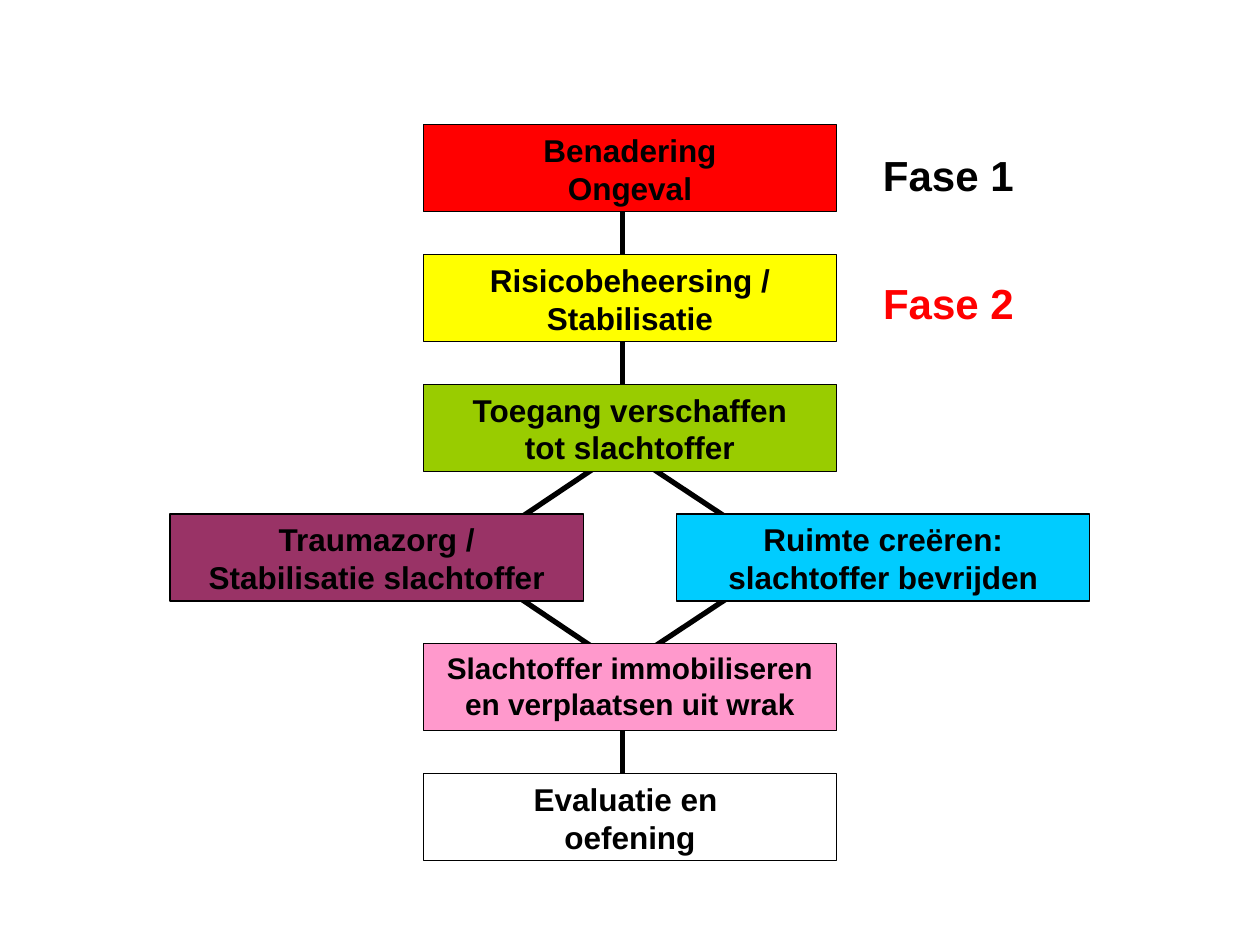
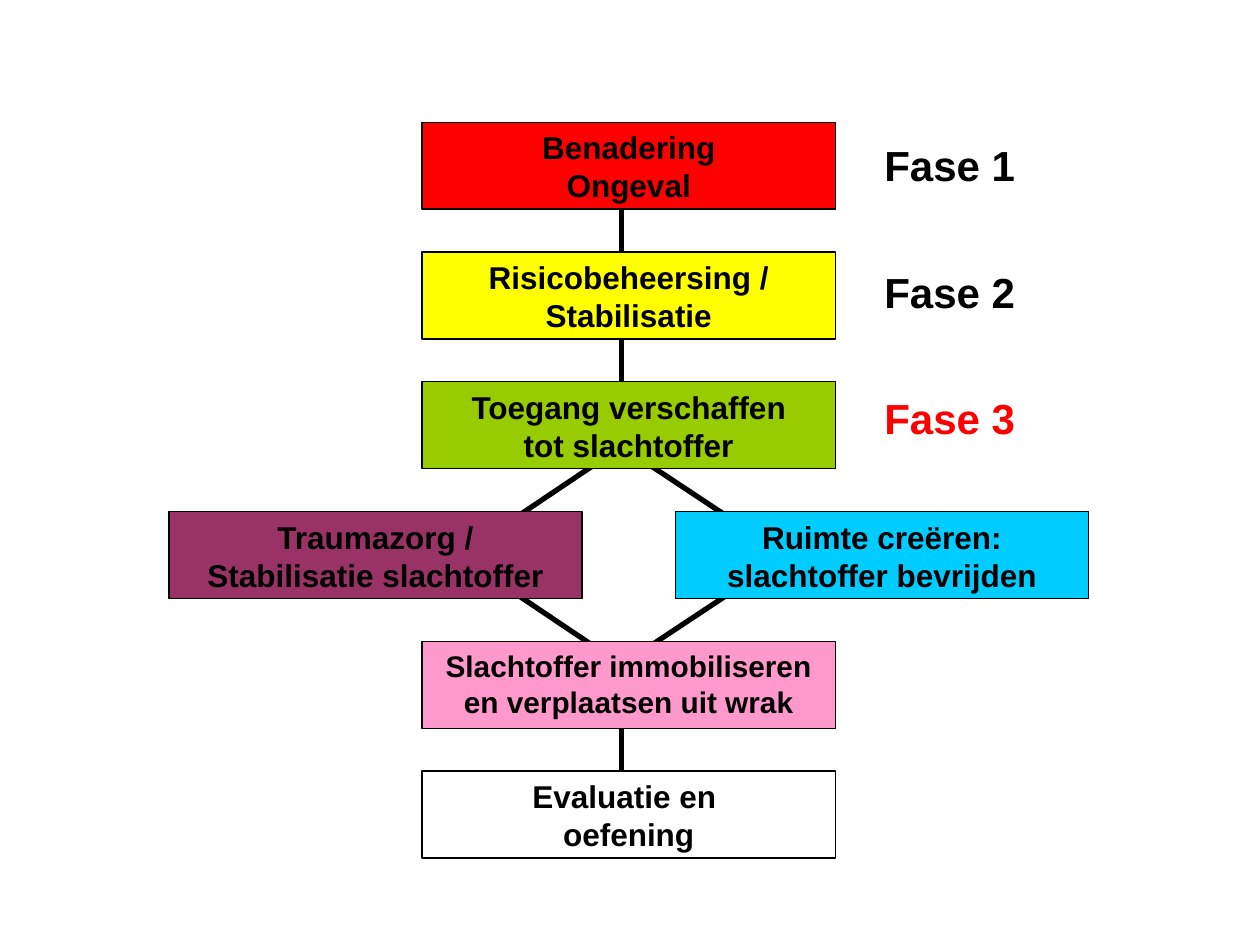
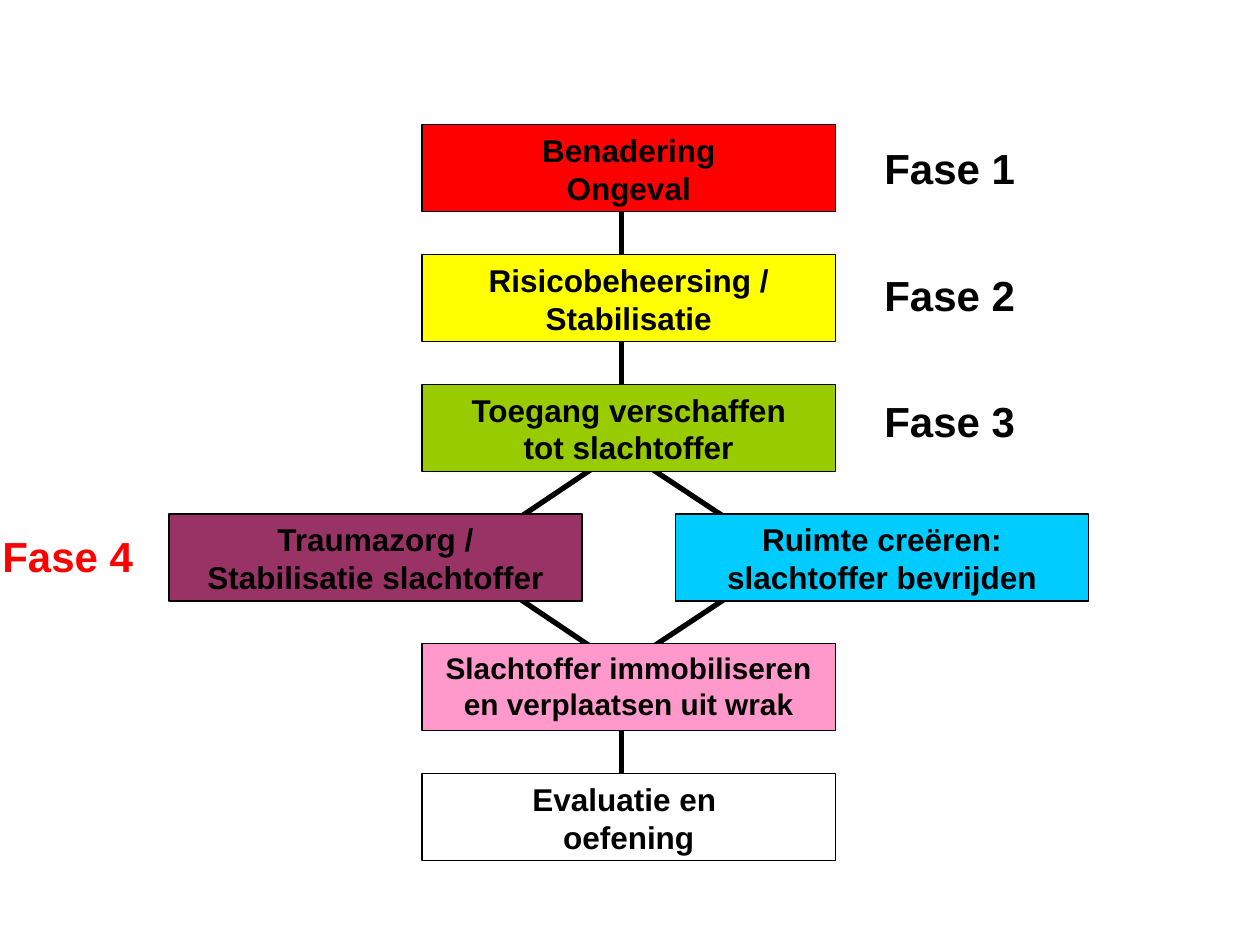
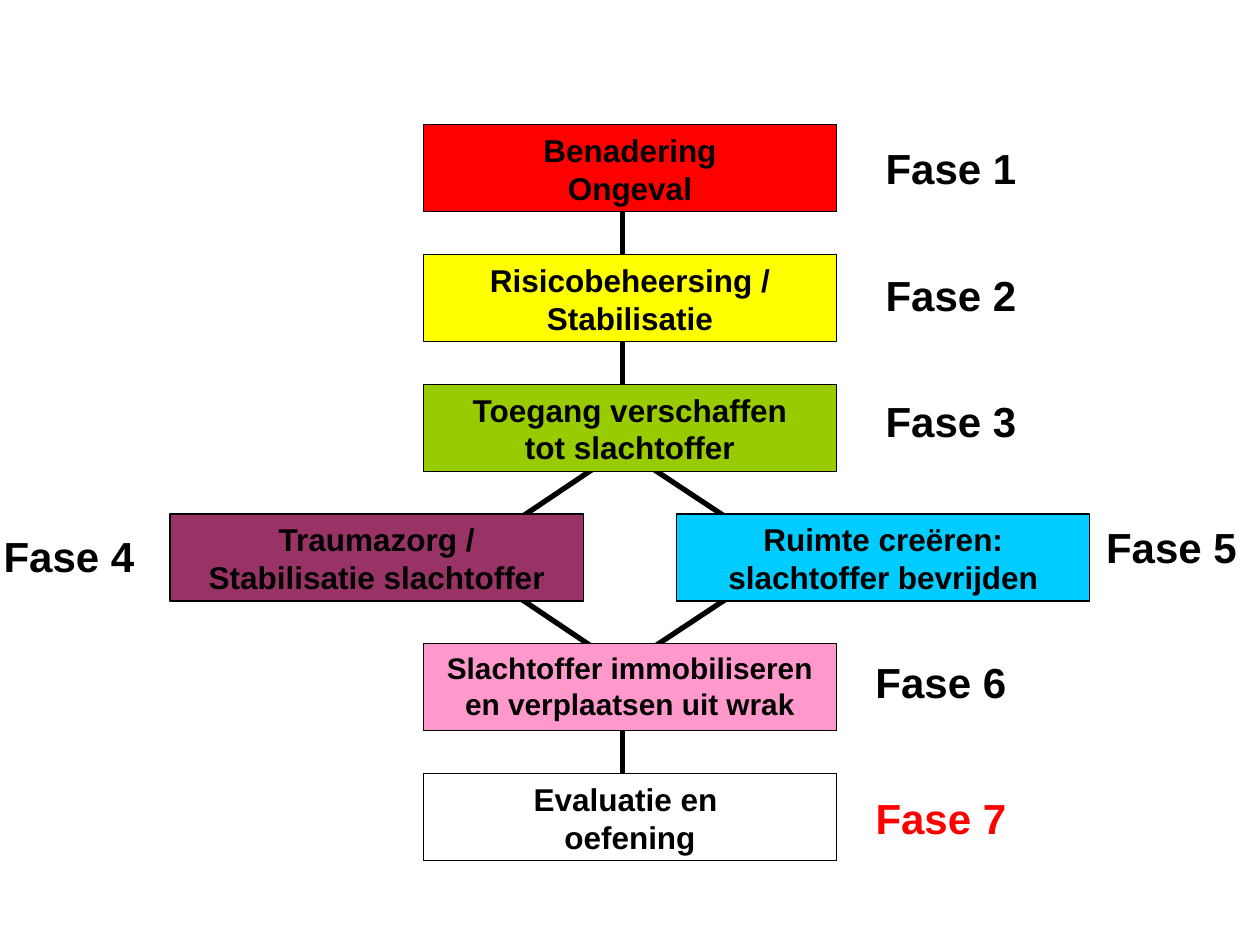
from lxml.etree import SubElement
from pptx import Presentation
from pptx.dml.color import RGBColor
from pptx.enum.shapes import MSO_CONNECTOR, MSO_SHAPE
from pptx.enum.text import MSO_ANCHOR, MSO_AUTO_SIZE, PP_ALIGN
from pptx.oxml.ns import qn
from pptx.util import Inches, Pt

BLACK = "000000"
RED = "FF0000"
BOX_WIDTH, BOX_HEIGHT = 3.28, 0.69
ROW_PITCH = 1.03
SIDE_OFFSET = 2.01
LINK_HEIGHT = 0.69
LINK_X = 1.58
BRANCH_HEIGHT = 0.47

STEPS = [
    (0, 0, "Benadering\nOngeval", RED, 18),
    (0, 1, "Risicobeheersing /\nStabilisatie", "FFFF00", 18),
    (0, 2, "Toegang verschaffen\ntot slachtoffer", "99CC00", 18),
    (-1, 3, "Traumazorg /\nStabilisatie slachtoffer", "993366", 18),
    (1, 3, "Ruimte creëren:\nslachtoffer bevrijden", "00CCFF", 18),
    (0, 4, "Slachtoffer immobiliseren\nen verplaatsen uit wrak", "FF99CC", 17),
    (0, 5, "Evaluatie en \noefening", "FFFFFF", 18),
]
LINK_TOPS = [4.64, 1.63, 0.69]
BRANCHES = [(0.71, 1.41, 3.72), (2.47, 1.76, 3.72), (1.76, 2.47, 2.69), (1.41, 0.71, 2.69)]
PHASE_PLACES = {
    1: (3.57, 0.09, 1.67),
    2: (3.57, 1.10, 1.75),
    3: (3.57, 2.10, 1.67),
    4: (-3.43, 3.17, 1.5),
    5: (5.32, 3.10, 1.75),
    6: (3.49, 4.17, 1.67),
    7: (3.49, 5.25, 1.58),
}
SLIDES = [
    (3.36, 0.99, 2, -0.02, 0.06),
    (3.35, 0.97, 3, 0, 0),
    (3.35, 0.99, 4, 0, 0),
    (3.36, 0.99, 7, 0, 0),
]


def color(value):
    return RGBColor.from_string(value)


class Deck:
    font = "Arial"

    def __init__(self):
        self.presentation = Presentation()
        self.presentation.slide_width = Inches(10)
        self.presentation.slide_height = Inches(7.5)

    def start_slide(self):
        self.slide = self.presentation.slides.add_slide(self.presentation.slide_layouts[6])
        self.group = self.slide.shapes.add_group_shape()

    def set_text(self, text_frame, text, size, text_color, alignment):
        text_frame.text = text
        text_frame.vertical_anchor = MSO_ANCHOR.TOP
        for paragraph in text_frame.paragraphs:
            paragraph.alignment = alignment
            for run in paragraph.runs:
                run.font.name = self.font
                run.font.size = Pt(size)
                run.font.bold = True
                run.font.color.rgb = color(text_color)

    def line(self, x1, y1, x2, y2):
        connector = self.group.shapes.add_connector(
            MSO_CONNECTOR.STRAIGHT, Inches(x1), Inches(y1), Inches(x2), Inches(y2))
        connector.line.color.rgb = color(BLACK)
        connector.line.width = Pt(3)
        SubElement(connector._element.spPr, qn("a:effectLst"))

    def box(self, left, top, text, fill, size):
        shape = self.group.shapes.add_shape(
            MSO_SHAPE.RECTANGLE, Inches(left), Inches(top), Inches(BOX_WIDTH), Inches(BOX_HEIGHT))
        shape.shadow.inherit = False
        shape.fill.solid()
        shape.fill.fore_color.rgb = color(fill)
        shape.line.color.rgb = color(BLACK)
        shape.line.width = Pt(0.75)
        self.set_text(shape.text_frame, text, size, BLACK, PP_ALIGN.CENTER)

    def label(self, left, top, width, text, text_color):
        shape = self.slide.shapes.add_textbox(Inches(left), Inches(top), Inches(width), Inches(0.5))
        shape.text_frame.word_wrap = True
        shape.text_frame.auto_size = MSO_AUTO_SIZE.SHAPE_TO_FIT_TEXT
        self.set_text(shape.text_frame, text, 24, text_color, PP_ALIGN.LEFT)

    def flowchart(self, left, top):
        for link_top in LINK_TOPS:
            start = top + link_top
            self.line(left + LINK_X, start, left + LINK_X, start + LINK_HEIGHT)
        for start_x, end_x, branch_top in BRANCHES:
            start = top + branch_top
            self.line(left + start_x, start, left + end_x, start + BRANCH_HEIGHT)
        for side, row, text, fill, size in STEPS:
            self.box(left + side * SIDE_OFFSET, top + row * ROW_PITCH, text, fill, size)

    def phases(self, left, top, current):
        for number in range(1, current + 1):
            x, y, width = PHASE_PLACES[number]
            text_color = RED if number == current else BLACK
            self.label(left + x, top + y, width, f"Fase {number}", text_color)


def main():
    deck = Deck()
    for left, top, current, shift_x, shift_y in SLIDES:
        deck.start_slide()
        deck.flowchart(left, top)
        deck.phases(left + shift_x, top + shift_y, current)
    deck.presentation.save("out.pptx")


if __name__ == "__main__":
    main()
